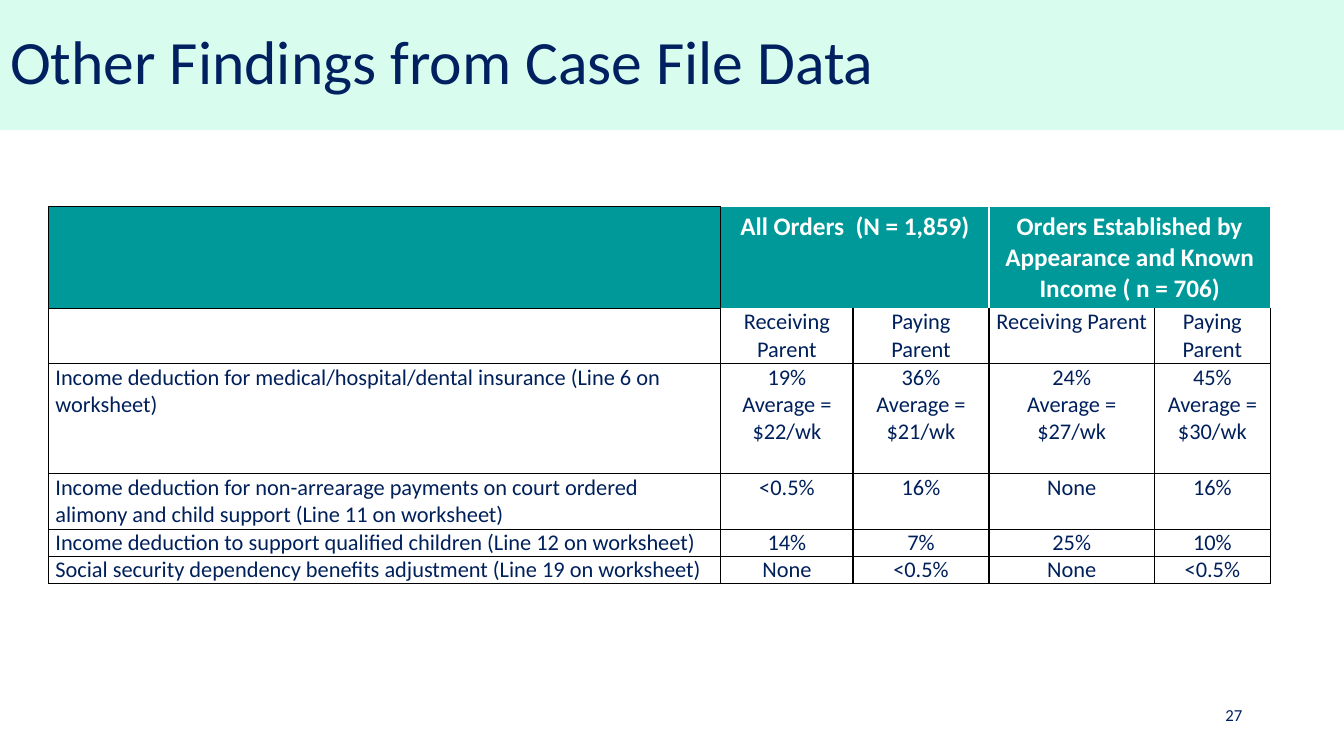
from dataclasses import dataclass

from lxml.etree import SubElement
from pptx import Presentation
from pptx.dml.color import RGBColor
from pptx.enum.text import MSO_ANCHOR as Anchor, PP_ALIGN as Align
from pptx.oxml.ns import qn
from pptx.util import Inches, Pt

COLORS = {"mint": "D8FCEE", "navy": "002060", "ink": "00205B",
          "teal": "009999", "white": "FFFFFF", "black": "000000"}
FONT = "Calibri"
COLUMN_WIDTHS = (6.67, 1.31, 1.35, 1.64, 1.15)
ROW_HEIGHTS = (1.01, 0.55, 1.09, 0.55, 0.27, 0.27)
ROWS = (
    ("", "All Orders  (N = 1,859)", "",
     "Orders Established by Appearance and Known Income ( n = 706)", ""),
    ("", *("Receiving Parent", "Paying Parent") * 2),
    ("Income deduction for medical/hospital/dental insurance (Line 6 on worksheet)",
     "19%\nAverage = $22/wk", "36%\nAverage = $21/wk",
     "24%\nAverage = $27/wk", "45%\nAverage = $30/wk"),
    ("Income deduction for non-arrearage payments on court ordered alimony "
     "and child support (Line 11 on worksheet)", "<0.5%", "16%", "None", "16%"),
    ("Income deduction to support qualified children (Line 12 on worksheet)",
     "14%", "7%", "25%", "10%"),
    ("Social security dependency benefits adjustment (Line 19 on worksheet)",
     "None", "<0.5%", "None", "<0.5%"),
)


@dataclass(frozen=True)
class CellStyle:
    """Look of one kind of table cell; borders map a side to a colour name."""
    fill: str
    color: str
    size: int
    bold: bool
    margin_x: float
    margin_y: float
    borders: dict[str, str]


ALL_BLACK = dict.fromkeys("LRTB", "black")
BODY = CellStyle("white", "ink", 16, False, 0.07, 0, ALL_BLACK)
SUBHEAD = CellStyle("white", "ink", 16, False, 0.07, 0, dict.fromkeys("LRB", "black"))
CORNER = CellStyle("teal", "white", 18, True, 0.1, 0.05, ALL_BLACK)
ALL_ORDERS = CellStyle("teal", "white", 18, True, 0.1, 0.05,
                       {"L": "black", "R": "white", "T": "white"})
KNOWN_INCOME = CellStyle("teal", "white", 18, True, 0.1, 0.05,
                         dict.fromkeys("LRT", "white"))
HEADER_STYLES = (CORNER, ALL_ORDERS, ALL_ORDERS, KNOWN_INCOME, KNOWN_INCOME)


def rgb(name: str) -> RGBColor:
    """Look up a named colour."""
    return RGBColor.from_string(COLORS[name])


def style_paragraph(para, size: int, color: str, align=Align.LEFT, bold=False) -> None:
    """Set the font and alignment of a whole paragraph."""
    para.alignment = align
    para.font.name = FONT
    para.font.size = Pt(size)
    para.font.bold = bold
    para.font.color.rgb = rgb(color)


def add_borders(cell, borders: dict[str, str]) -> None:
    """Draw the named sides of a cell and clear the others."""
    properties = cell._tc.get_or_add_tcPr()
    for side in "LRTB":
        line = SubElement(properties, qn(f"a:ln{side}"), w=str(Pt(1)))
        if side in borders:
            fill = SubElement(line, qn("a:solidFill"))
            SubElement(fill, qn("a:srgbClr"), val=COLORS[borders[side]])
        else:
            SubElement(line, qn("a:noFill"))


def fill_cell(cell, text: str, style: CellStyle, align) -> None:
    """Write and format one table cell."""
    add_borders(cell, style.borders)
    cell.fill.solid()
    cell.fill.fore_color.rgb = rgb(style.fill)
    cell.margin_left = cell.margin_right = Inches(style.margin_x)
    cell.margin_top = cell.margin_bottom = Inches(style.margin_y)
    cell.text = text
    for para in cell.text_frame.paragraphs:
        style_paragraph(para, style.size, style.color, align, style.bold)


def cell_style(row: int, column: int) -> CellStyle:
    """Choose the style that belongs to a table position."""
    if row == 0:
        return HEADER_STYLES[column]
    return SUBHEAD if row == 1 and column > 0 else BODY


def add_title(page) -> None:
    """Turn the title placeholder into the mint band."""
    title = page.shapes.title
    title.left = title.top = Inches(0)
    title.width, title.height = Inches(13.33), Inches(1.29)
    title.fill.solid()
    title.fill.fore_color.rgb = rgb("mint")
    title.text_frame.text = "Other Findings from Case File Data"
    title.text_frame.vertical_anchor = Anchor.MIDDLE
    para = title.text_frame.paragraphs[0]
    para.line_spacing = 0.9
    style_paragraph(para, 44, "navy")


def add_findings_table(page) -> None:
    """Add the table of deductions by parent and order type."""
    table = page.shapes.add_table(
        len(ROWS), len(COLUMN_WIDTHS), Inches(0.48), Inches(2.05),
        Inches(sum(COLUMN_WIDTHS)), Inches(sum(ROW_HEIGHTS))).table
    table.first_row = table.horz_banding = False
    for column, width in zip(table.columns, COLUMN_WIDTHS):
        column.width = Inches(width)
    for row, height in zip(table.rows, ROW_HEIGHTS):
        row.height = Inches(height)
    for row, texts in enumerate(ROWS):
        for column, text in enumerate(texts):
            align = Align.CENTER if column else Align.LEFT
            fill_cell(table.cell(row, column), text, cell_style(row, column), align)
    for column in (1, 3):
        table.cell(0, column).merge(table.cell(0, column + 1))


def add_page_number(page) -> None:
    """Add the page number at the lower right."""
    box = page.shapes.add_textbox(Inches(11.94), Inches(6.97), Inches(0.48), Inches(0.24))
    frame = box.text_frame
    frame.word_wrap = True
    frame.vertical_anchor = Anchor.MIDDLE
    frame.text = "27"
    style_paragraph(frame.paragraphs[0], 12, "navy", Align.RIGHT)


def main() -> None:
    """Build and save the deck."""
    deck = Presentation()
    deck.slide_width, deck.slide_height = Inches(13.33), Inches(7.5)
    page = deck.slides.add_slide(deck.slide_layouts[5])
    add_title(page)
    add_page_number(page)
    add_findings_table(page)
    deck.save("out.pptx")


if __name__ == "__main__":
    main()
